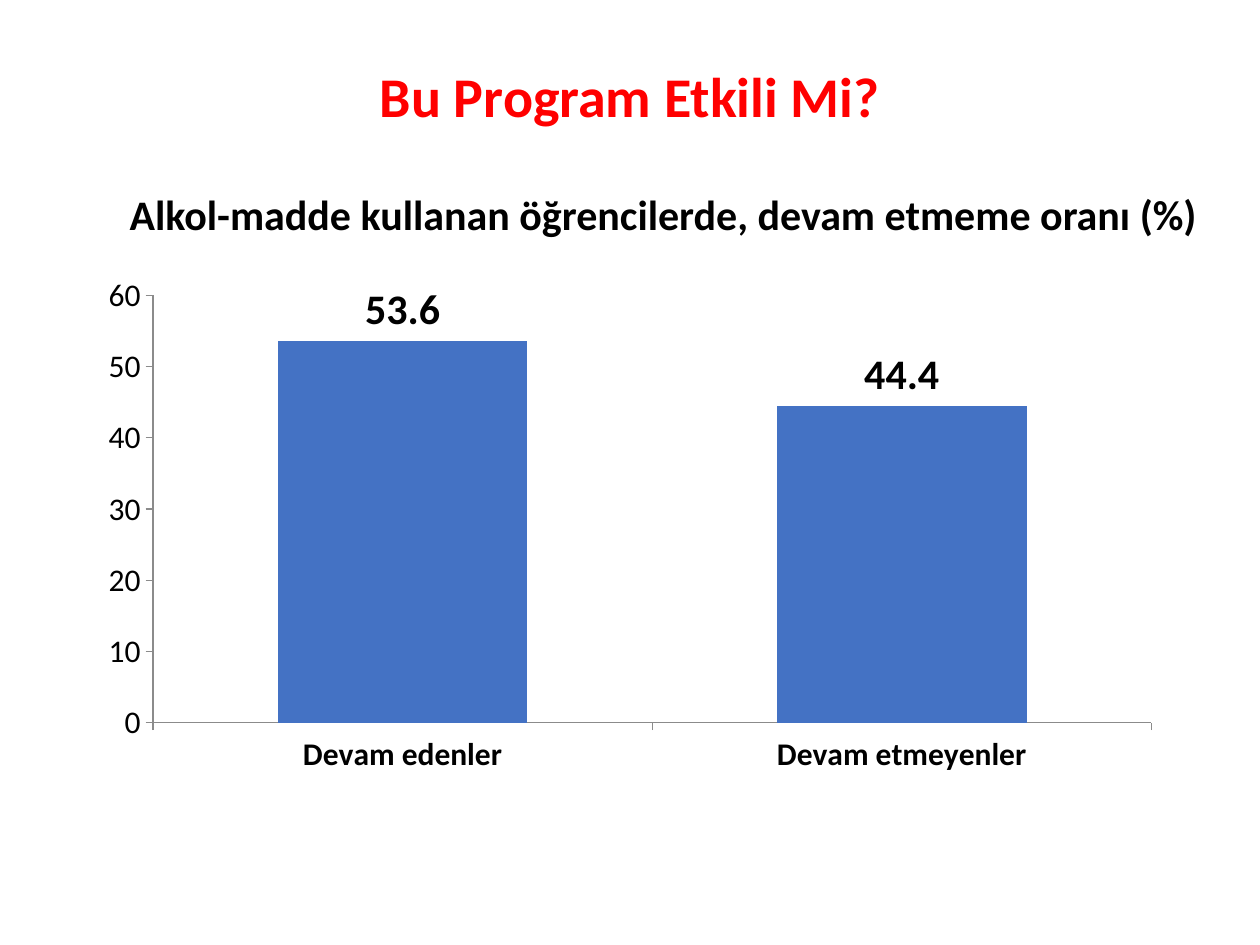
from pptx import Presentation
from pptx.chart.data import CategoryChartData
from pptx.dml.color import RGBColor
from pptx.enum import chart as ch, text
from pptx.util import Inches, Pt

FONT = "Calibri"
BLACK = RGBColor(0x00, 0x00, 0x00)
RED = RGBColor(0xFF, 0x00, 0x00)
BLUE = RGBColor(0x44, 0x72, 0xC4)
GRAY = RGBColor(0x8B, 0x8B, 0x8B)


def style_font(font, size, color=BLACK, bold=False):
    font.name = FONT
    font.size = Pt(size)
    font.bold = bold
    font.color.rgb = color


def add_heading(slide, words, left, top, width, height, size, color):
    box = slide.shapes.add_textbox(Inches(left), Inches(top), Inches(width), Inches(height))
    tf = box.text_frame
    tf.word_wrap = True
    tf.vertical_anchor = text.MSO_ANCHOR.MIDDLE
    p = tf.paragraphs[0]
    p.text = words
    p.alignment = text.PP_ALIGN.CENTER
    p.line_spacing = 0.9
    style_font(p.runs[0].font, size, color, bold=True)


def style_axis(axis, bold=False):
    axis.has_major_gridlines = False
    axis.major_tick_mark = ch.XL_TICK_MARK.OUTSIDE
    axis.minor_tick_mark = ch.XL_TICK_MARK.NONE
    axis.format.line.color.rgb = GRAY
    axis.format.line.width = Pt(0.75)
    style_font(axis.tick_labels.font, 18, bold=bold)


def add_rate_chart(slide, left, top, width, height):
    data = CategoryChartData()
    data.categories = ["Devam edenler", "Devam etmeyenler"]
    data.add_series("Series 1", (53.6, 44.4))
    chart = slide.shapes.add_chart(
        ch.XL_CHART_TYPE.COLUMN_CLUSTERED,
        Inches(left), Inches(top), Inches(width), Inches(height), data).chart
    chart.has_title = False
    chart.has_legend = False
    style_font(chart.font, 18)

    # Axes
    style_axis(chart.category_axis, bold=True)
    style_axis(chart.value_axis)
    chart.value_axis.minimum_scale = 0
    chart.value_axis.maximum_scale = 60
    chart.value_axis.major_unit = 10

    # Columns and their values
    plot = chart.plots[0]
    plot.gap_width = 100
    plot.vary_by_categories = False
    series = plot.series[0]
    series.format.fill.solid()
    series.format.fill.fore_color.rgb = BLUE
    labels = series.data_labels
    labels.show_value = True
    labels.position = ch.XL_LABEL_POSITION.OUTSIDE_END
    style_font(labels.font, 24, bold=True)


def main():
    prs = Presentation()
    prs.slide_width = Inches(10)
    prs.slide_height = Inches(7.5)
    slide = prs.slides.add_slide(prs.slide_layouts[6])

    # Chart
    add_rate_chart(slide, 0.69, 2.11, 8.62, 4.11)

    # Headings
    add_heading(slide, "Alkol-madde kullanan öğrencilerde, devam etmeme oranı (%)",
                0.69, 1.33, 9.15, 0.78, 24, BLACK)
    add_heading(slide, "Bu Program Etkili Mi?", 0.69, 0.4, 8.62, 0.78, 32, RED)

    prs.save("out.pptx")


if __name__ == "__main__":
    main()
